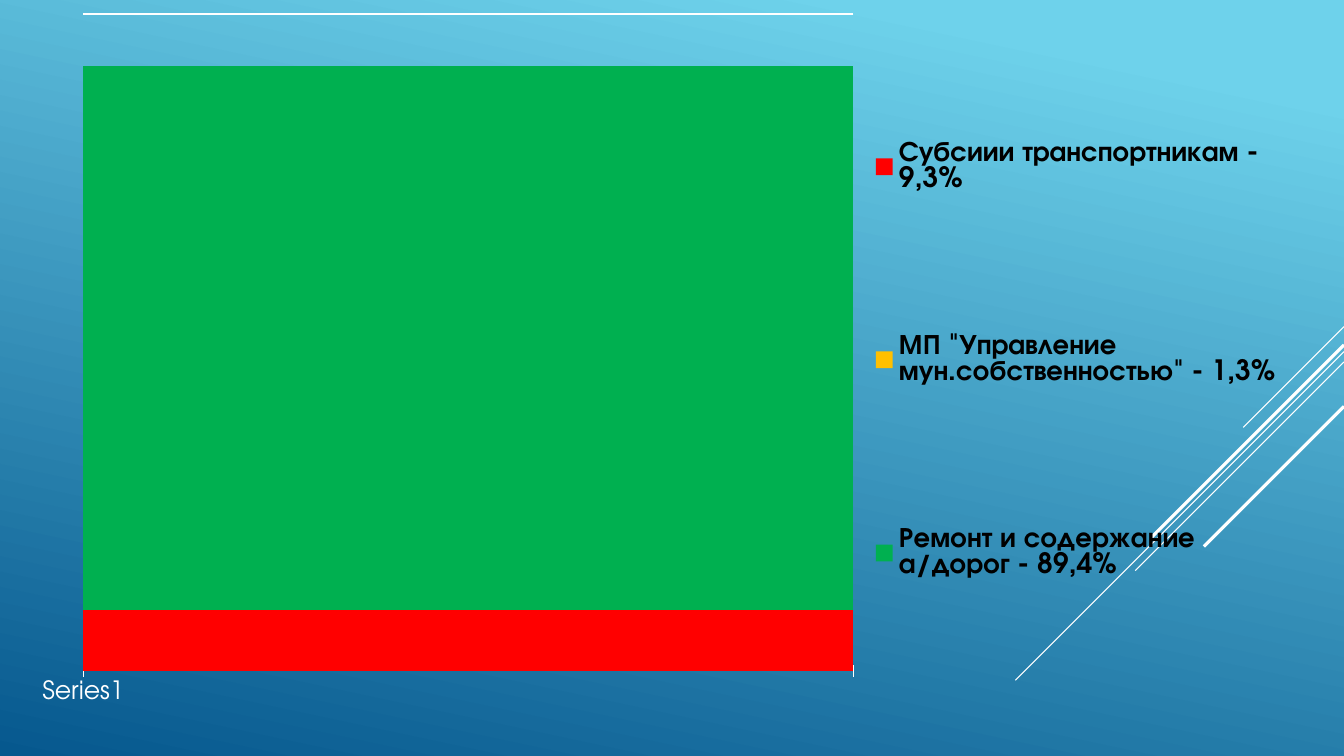
from dataclasses import dataclass

from lxml import etree
from pptx import Presentation
from pptx.chart.data import CategoryChartData
from pptx.dml.color import RGBColor as RGB
from pptx.enum.chart import XL_CHART_TYPE as ChartType
from pptx.enum.chart import XL_LEGEND_POSITION as LegendPos
from pptx.enum.chart import XL_TICK_MARK as Tick
from pptx.enum.shapes import MSO_CONNECTOR as Connector
from pptx.oxml.ns import qn
from pptx.util import Cm, Pt


@dataclass(frozen=True)
class Theme:
    """Colours, font and type sizes of the slide."""
    font: str = "TeX Gyre Adventor"
    light: RGB = RGB(0xFF, 0xFF, 0xFF)
    dark: RGB = RGB(0, 0, 0)
    sky: RGB = RGB(0x6E, 0xD2, 0xEB)
    sea: RGB = RGB(0x06, 0x58, 0x8E)
    axis_size: Pt = Pt(18)
    legend_size: Pt = Pt(20)
    hairline: Pt = Pt(0.75)
    stroke: Pt = Pt(2.25)


THEME = Theme()
WIDTH, HEIGHT = Cm(33.87), Cm(19.05)
AXIS_MAX = 108.6
PLOT_PERCENT = (5.13, 1.95, 59.8, 91.25)
LEGEND_PERCENT = (65.7, 0, 33, 100)
SPENDING = [
    ("Субсиии транспортникам - 9,3%", 10, RGB(0xFF, 0, 0)),
    ('МП "Управление мун.собственностью" - 1,3%', 1, RGB(0xFF, 0xC0, 0)),
    ("Ремонт и содержание а/дорог - 89,4%", 100, RGB(0, 0xB0, 0x50)),
]
RAYS = [
    (8.23, 2.54, THEME.hairline),
    (8.86, 8.28, THEME.hairline),
    (9.12, 5.26, THEME.hairline),
    (8.69, 4.85, THEME.stroke),
    (10.24, 3.53, THEME.stroke),
]


def paint_background(slide):
    """Fill the slide with a slanted gradient from sky to sea."""
    fill = slide.background.fill
    fill.gradient()
    fill.gradient_angle = 258
    stops = zip(fill.gradient_stops, (0.1, 1), (THEME.sky, THEME.sea))
    for stop, position, color in stops:
        stop.position = position
        stop.color.rgb = color


def add_rays(slide, right, top):
    """Draw the diagonal lines that run down from the right edge."""
    for drop, reach, weight in RAYS:
        y = top + Cm(drop)
        line = slide.shapes.add_connector(
            Connector.STRAIGHT, right, y, right - Cm(reach), y + Cm(reach))
        line.line.color.rgb = THEME.light
        line.line.width = weight
        etree.SubElement(line._element.spPr, qn("a:effectLst"))


def set_layout(element, before, box, inner=False):
    """Place a chart part at percentages of the chart area."""
    for old in element.findall(qn("c:layout")):
        element.remove(old)
    layout = etree.Element(qn("c:layout"))
    manual = etree.SubElement(layout, qn("c:manualLayout"))
    values = [("layoutTarget", "inner")] if inner else []
    values += [("xMode", "edge"), ("yMode", "edge")]
    values += [(tag, str(part / 100)) for tag, part in zip("xywh", box)]
    for tag, value in values:
        etree.SubElement(manual, qn(f"c:{tag}")).set("val", value)
    if before is None:
        element.insert(0, layout)
    else:
        element.find(qn(before)).addprevious(layout)


def style_font(font, size, color, bold=False):
    """Set the typeface, size, colour and weight of a chart font."""
    font.name = THEME.font
    font.size = size
    font.bold = bold
    font.color.rgb = color


def add_spending_chart(slide, left, top, width, height):
    """Add the area chart of spending shares with its legend."""
    data = CategoryChartData()
    data.categories = ["Series1", ""]
    for name, value, _ in SPENDING:
        data.add_series(name, [value, value])
    chart = slide.shapes.add_chart(
        ChartType.AREA, left, top, width, height, data).chart
    chart.has_title = False
    style_font(chart.font, THEME.axis_size, THEME.light)

    plot = chart.plots[0]
    plot.vary_by_categories = False
    for series, (_, _, color) in zip(plot.series, SPENDING):
        series.format.fill.solid()
        series.format.fill.fore_color.rgb = color

    axis = chart.category_axis
    axis.major_tick_mark = Tick.CROSS
    axis.minor_tick_mark = Tick.NONE
    axis.format.line.color.rgb = THEME.light
    style_font(axis.tick_labels.font, THEME.axis_size, THEME.light)

    scale = chart.value_axis
    scale.minimum_scale = 0
    scale.maximum_scale = scale.major_unit = AXIS_MAX
    scale.has_major_gridlines = True
    scale.major_gridlines.format.line.color.rgb = THEME.light
    scale.major_gridlines.format.line.width = THEME.hairline
    scale.visible = False

    chart.has_legend = True
    legend = chart.legend
    legend.position = LegendPos.RIGHT
    legend.include_in_layout = False
    style_font(legend.font, THEME.legend_size, THEME.dark, bold=True)

    area = chart._chartSpace.chart.plotArea
    set_layout(area, None, PLOT_PERCENT, inner=True)
    set_layout(legend._element, "c:overlay", LEGEND_PERCENT)


def build_slide(prs):
    """Build the road spending slide."""
    slide = prs.slides.add_slide(prs.slide_layouts[6])
    paint_background(slide)
    add_rays(slide, WIDTH, 0)
    add_spending_chart(slide, Cm(0.43), 0, Cm(32.46), Cm(18.14))


def main():
    """Create and save the presentation."""
    prs = Presentation()
    prs.slide_width, prs.slide_height = WIDTH, HEIGHT
    build_slide(prs)
    prs.save("out.pptx")


if __name__ == "__main__":
    main()
